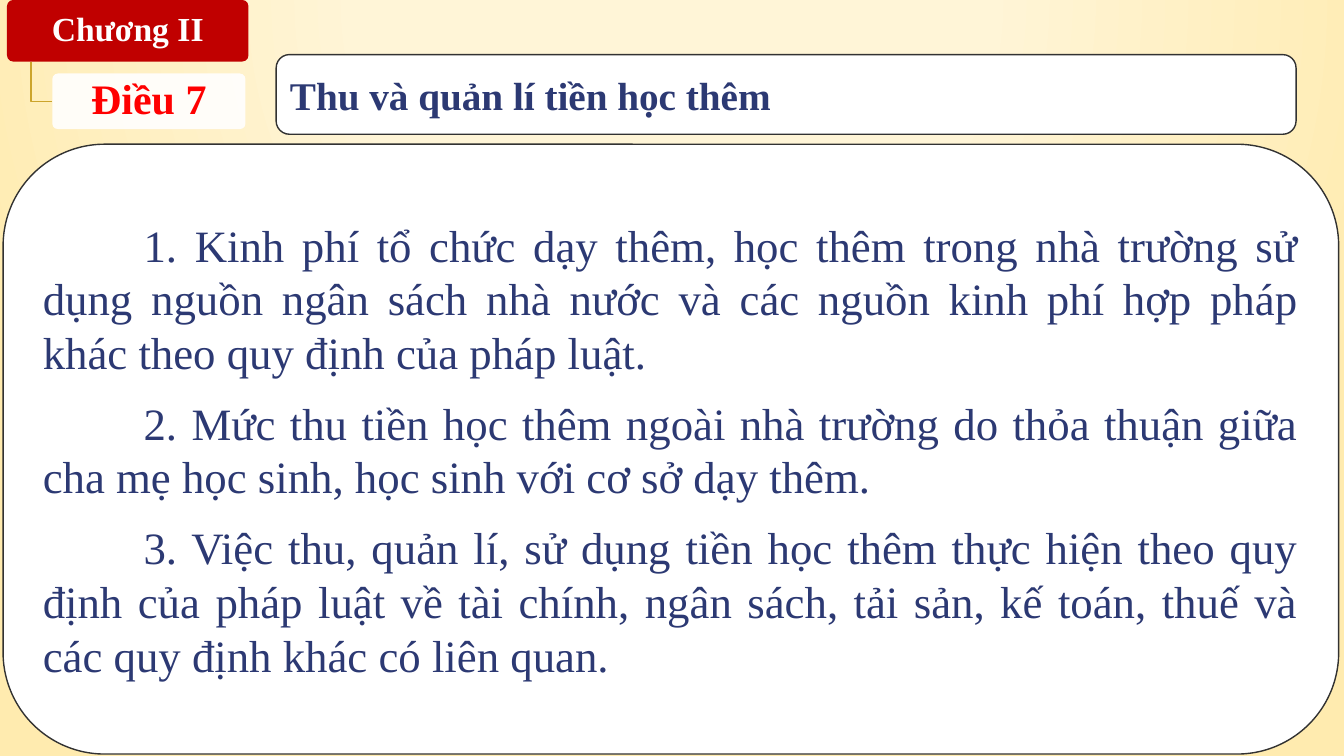
from pptx import Presentation
from pptx.dml.color import RGBColor
from pptx.enum.shapes import MSO_SHAPE
from pptx.enum.text import MSO_ANCHOR, PP_ALIGN as ALIGN
from pptx.oxml import parse_xml
from pptx.oxml.ns import nsdecls
from pptx.oxml.xmlchemy import OxmlElement
from pptx.util import Pt

FONT = "Times New Roman"
WHITE = RGBColor(0xFF, 0xFF, 0xFF)
RED = RGBColor(0xFF, 0x00, 0x00)
DARK_RED = RGBColor(0xC0, 0x00, 0x00)
GOLD = RGBColor(0xCC, 0xA4, 0x2B)
NAVY = RGBColor(0x2C, 0x39, 0x73)
OUTLINE = RGBColor(0x32, 0x32, 0x32)
CREAM = RGBColor(0xFF, 0xF5, 0xD7)
SAND = RGBColor(0xFF, 0xEB, 0xAF)

GLOW_STOPS = [(0, CREAM, 59), (40, CREAM, 66), (100, SAND, 100)]

CLAUSES = [
    "1. Kinh phí tổ chức dạy thêm, học thêm trong nhà trường sử dụng nguồn "
    "ngân sách nhà nước và các nguồn kinh phí hợp pháp khác theo quy định "
    "của pháp luật.",
    "2. Mức thu tiền học thêm ngoài nhà trường do thỏa thuận giữa cha mẹ "
    "học sinh, học sinh với cơ sở dạy thêm.",
    "3. Việc thu, quản lí, sử dụng tiền học thêm thực hiện theo quy định của "
    "pháp luật về tài chính, ngân sách, tải sản, kế toán, thuế và các quy "
    "định khác có liên quan.",
]


def set_glow_background(slide):
    """Fill the background with a radial gradient centred above the slide."""
    stops = "".join(
        f'<a:gs pos="{pos * 1000}"><a:srgbClr val="{color}">'
        f'<a:alpha val="{alpha * 1000}"/></a:srgbClr></a:gs>'
        for pos, color, alpha in GLOW_STOPS)
    fill = slide.background.fill
    fill.gradient()
    grad = slide._element.cSld.bg.bgPr.find(
        "{http://schemas.openxmlformats.org/drawingml/2006/main}gradFill")
    grad.getparent().replace(grad, parse_xml(
        f'<a:gradFill {nsdecls("a")} rotWithShape="1"><a:gsLst>{stops}</a:gsLst>'
        '<a:path path="circle"><a:fillToRect l="50000" t="-80000" r="50000" '
        'b="180000"/></a:path></a:gradFill>'))


def add_box(slide, box, fill, line=None, corner=0.1667, opacity=100):
    sp = slide.shapes.add_shape(MSO_SHAPE.ROUNDED_RECTANGLE, *map(Pt, box))
    sp.shadow.inherit = False
    sp.adjustments[0] = corner
    sp.fill.solid()
    sp.fill.fore_color.rgb = fill
    if opacity < 100:
        alpha = OxmlElement("a:alpha")
        alpha.set("val", str(opacity * 1000))
        sp.fill._xPr.solidFill.srgbClr.append(alpha)
    if line is None:
        sp.line.fill.background()
    else:
        sp.line.color.rgb = line
        sp.line.width = Pt(1)
    return sp


def write(sp, texts, size, color, bold=False, indent=0, inset=None, **spacing):
    """Write one paragraph per text; spacing holds paragraph attributes."""
    tf = sp.text_frame
    tf.word_wrap = True
    tf.vertical_anchor = MSO_ANCHOR.MIDDLE
    if inset is not None:
        for side in ("left", "top", "right", "bottom"):
            setattr(tf, f"margin_{side}", Pt(inset))
    for i, text in enumerate(texts):
        p = tf.add_paragraph() if i else tf.paragraphs[0]
        for name, value in spacing.items():
            setattr(p, name, value)
        if indent:
            p._p.get_or_add_pPr().set("indent", str(Pt(indent)))
        r = p.add_run()
        r.text = text
        r.font.color.rgb = color
        for name, value in {"name": FONT, "size": Pt(size), "bold": bold}.items():
            setattr(r.font, name, value)


def add_bend(slide, points, color):
    start, *rest = [(Pt(x), Pt(y)) for x, y in points]
    builder = slide.shapes.build_freeform(*start)
    builder.add_line_segments(rest, close=False)
    sp = builder.convert_to_shape()
    sp.shadow.inherit = False
    sp.fill.background()
    sp.line.color.rgb = color
    sp.line.width = Pt(1)


def main():
    prs = Presentation()
    prs.slide_width, prs.slide_height = Pt(960), Pt(540)
    slide = prs.slides.add_slide(prs.slide_layouts[6])
    set_glow_background(slide)

    label = {"bold": True, "inset": 3, "alignment": ALIGN.CENTER,
             "line_spacing": 0.9}
    chapter = add_box(slide, (5, 0, 172.5, 44), DARK_RED, corner=0.1)
    write(chapter, ["Chương II"], 24, WHITE, **label)
    add_bend(slide, [(22.2, 44), (22.2, 72.4), (37.4, 72.4)], GOLD)
    article = add_box(slide, (37.4, 52.5, 138, 39.7), WHITE, corner=0.1, opacity=90)
    write(article, ["Điều 7"], 30, RED, **label)

    body = add_box(slide, (2.2, 103, 954, 435.6), WHITE, OUTLINE)
    write(body, CLAUSES, 32, NAVY, indent=72, alignment=ALIGN.JUSTIFY,
          space_before=Pt(6), space_after=Pt(6))

    title = add_box(slide, (197.3, 39, 728.5, 56.9), WHITE, OUTLINE)
    write(title, ["Thu và quản lí tiền học thêm"], 28, NAVY, bold=True,
          alignment=ALIGN.LEFT)

    prs.save("out.pptx")


if __name__ == "__main__":
    main()
